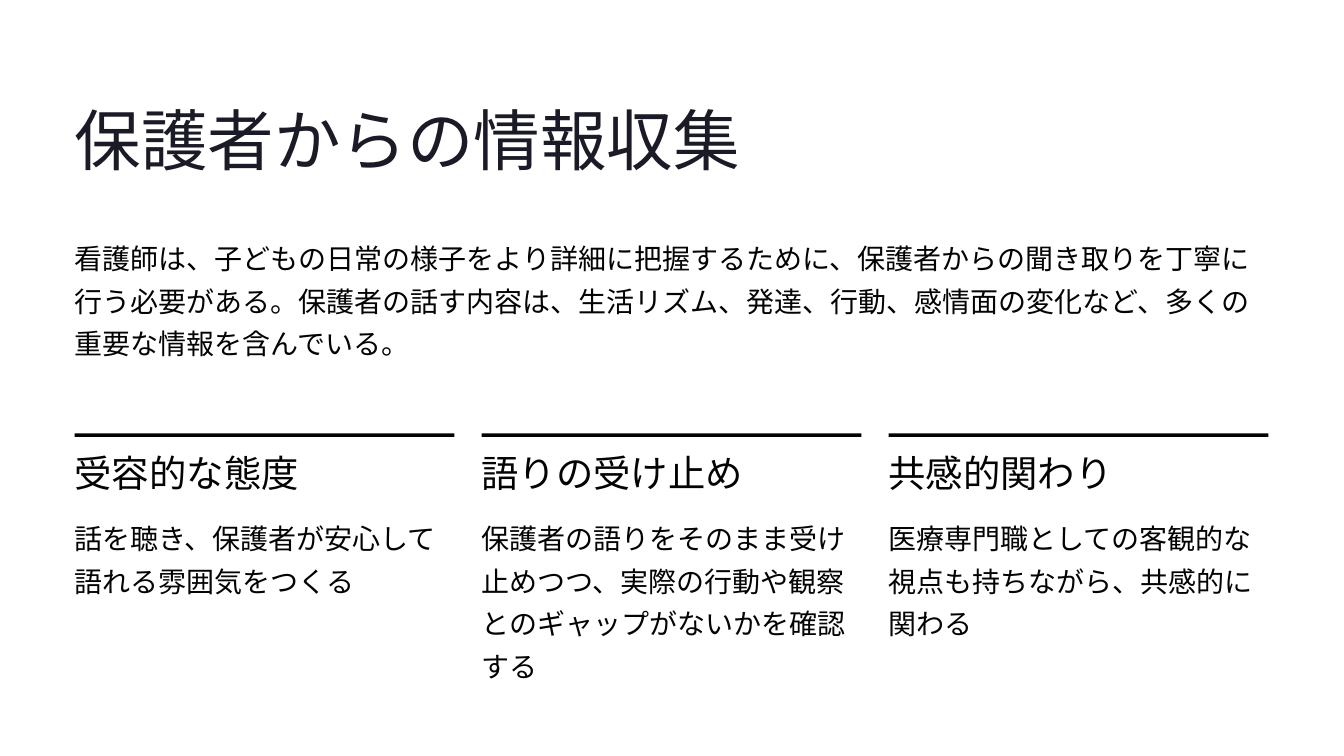
from pptx import Presentation
from pptx.dml.color import RGBColor
from pptx.enum.lang import MSO_LANGUAGE_ID as LANG
from pptx.enum.shapes import MSO_SHAPE as SHAPE
from pptx.oxml.ns import qn
from pptx.util import Pt

WHITE = RGBColor(0xFF, 0xFF, 0xFF)
NAVY = RGBColor(0x1B, 0x1B, 0x27)
BLACK = RGBColor(0x03, 0x03, 0x03)

LEFT = 64
COLUMN_WIDTH = 325.5
COLUMN_PITCH = 348.8
RULE_TOP, HEADING_TOP, BODY_TOP = 371.5, 388.8, 439.2

TITLE = {"font": "Inter", "size": 57, "color": NAVY, "spacing": 71.5, "wrap": False}
HEADING = {"font": "Inter", "size": 32, "color": BLACK, "spacing": 35.5, "wrap": False}
BODY = {"font": "Roboto", "size": 24, "color": BLACK, "spacing": 36.5, "wrap": True}

INTRO = (
    "看護師は、子どもの日常の様子をより詳細に把握するために、保護者からの聞き取りを丁寧に"
    "行う必要がある。保護者の話す内容は、生活リズム、発達、行動、感情面の変化など、多くの"
    "重要な情報を含んでいる。"
)
COLUMNS = [
    ("受容的な態度", "話を聴き、保護者が安心して語れる雰囲気をつくる", 73.4),
    ("語りの受け止め",
     "保護者の語りをそのまま受け止めつつ、実際の行動や観察とのギャップがないかを確認する", 110),
    ("共感的関わり", "医療専門職としての客観的な視点も持ちながら、共感的に関わる", 110),
]


def add_text(s, text, left, top, width, height, style):
    """Add a text box without margins in the given style."""
    sp = s.shapes.add_textbox(Pt(left), Pt(top), Pt(width), Pt(height))
    tf = sp.text_frame
    tf.word_wrap = style["wrap"]
    for side in ("left", "top", "right", "bottom"):
        setattr(tf, f"margin_{side}", 0)
    p = tf.paragraphs[0]
    p.line_spacing = Pt(style["spacing"])
    r = p.add_run()
    r.text = text
    values = {"name": style["font"], "size": Pt(style["size"]), "language_id": LANG.JAPANESE}
    for name, value in values.items():
        setattr(r.font, name, value)
    r.font.color.rgb = style["color"]
    ea = r.font._element.makeelement(qn("a:ea"), {"typeface": style["font"]})
    r.font._element.append(ea)


def add_rule(s, left, top, width):
    """Add a thin solid bar above a column."""
    sp = s.shapes.add_shape(SHAPE.RECTANGLE, Pt(left), Pt(top), Pt(width), Pt(3))
    sp.shadow.inherit = False
    sp.fill.solid()
    sp.fill.fore_color.rgb = BLACK
    sp.line.fill.background()


def add_column(s, index, heading, body, body_height):
    """Add a rule, a heading and a body text as one column."""
    left = LEFT + index * COLUMN_PITCH
    add_rule(s, left, RULE_TOP, COLUMN_WIDTH)
    add_text(s, heading, left, HEADING_TOP, 287.5, 36, HEADING)
    add_text(s, body, left, BODY_TOP, COLUMN_WIDTH, body_height, BODY)


def main():
    """Build the slide and save it."""
    prs = Presentation()
    prs.slide_width, prs.slide_height = Pt(1152), Pt(648)
    s = prs.slides.add_slide(prs.slide_layouts[6])
    s.background.fill.solid()
    s.background.fill.fore_color.rgb = WHITE
    add_text(s, "保護者からの情報収集", LEFT, 81.4, 574.5, 72, TITLE)
    add_text(s, INTRO, LEFT, 199.4, 1023, 110, BODY)
    for index, column in enumerate(COLUMNS):
        add_column(s, index, *column)
    prs.save("out.pptx")


if __name__ == "__main__":
    main()
